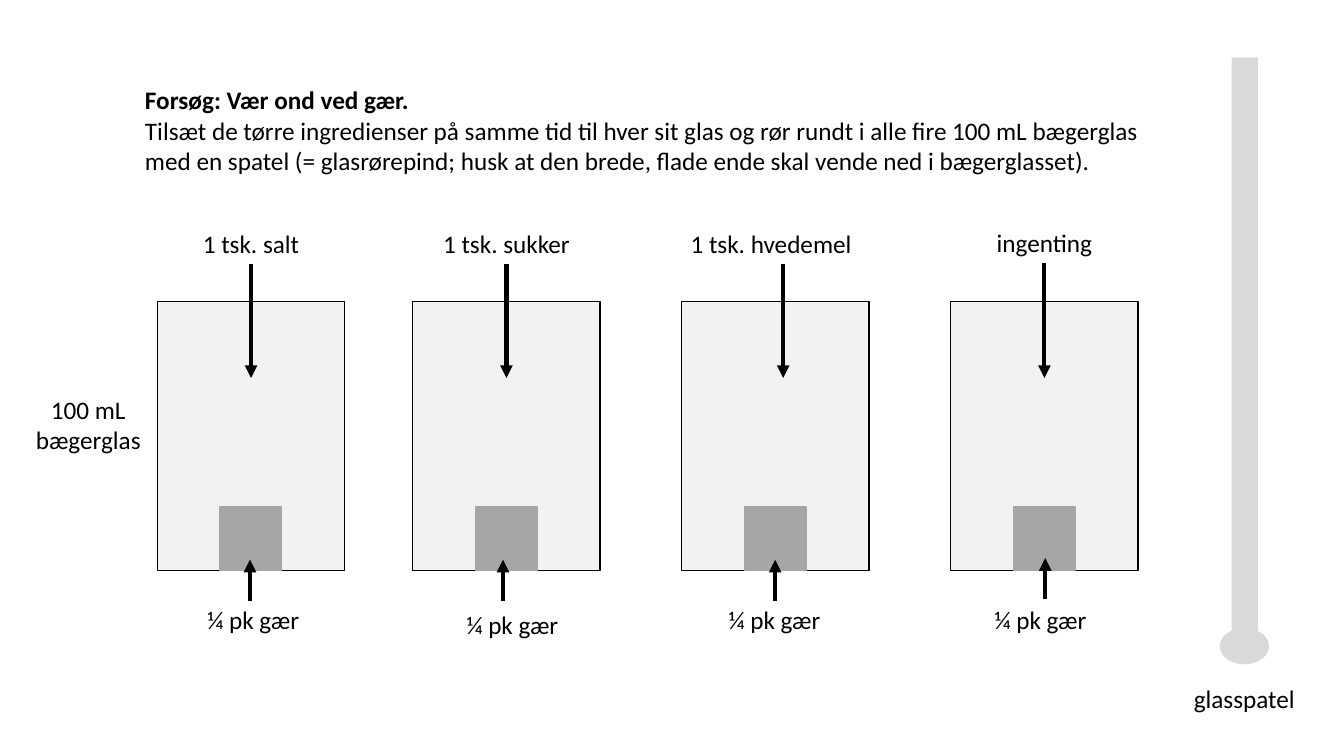
from dataclasses import dataclass

from lxml.etree import SubElement
from pptx import Presentation
from pptx.dml.color import RGBColor
from pptx.enum.shapes import MSO_CONNECTOR, MSO_SHAPE
from pptx.enum.text import MSO_AUTO_SIZE, PP_ALIGN
from pptx.oxml.ns import qn
from pptx.util import Pt

HEADING = "Forsøg: Vær ond ved gær."
INSTRUCTION = (
    "Tilsæt de tørre ingredienser på samme tid til hver sit glas og rør rundt i alle fire "
    "100 mL bægerglas med en spatel (= glasrørepind; husk at den brede, flade ende skal "
    "vende ned i bægerglasset)."
)
BEAKER_LABEL = "100 mL bægerglas"
YEAST_LABEL = "¼ pk gær"
SPATULA_LABEL = "glasspatel"


@dataclass
class Beaker:
    left: float
    ingredient: str
    ingredient_box: tuple
    pour_x: float
    yeast_label_at: tuple
    yeast_arrow_x: float
    yeast_arrow_y: float


BEAKERS = [
    Beaker(112.3, "1 tsk. salt", (112.3, 159.8, 134), 178.6, (141.1, 428.4), 178.6, 429.1),
    Beaker(294.5, "1 tsk. sukker", (303.1, 159.8, 117.4), 361.6, (326.2, 431.6), 359.3, 429.1),
    Beaker(486.7, "1 tsk. hvedemel", (483.8, 159.8, 134), 559.4, (513.4, 428), 553.7, 429.1),
    Beaker(679, "ingenting", (679, 159.1, 134), 745.4, (703.4, 428), 747.2, 428),
]


class Theme:
    font = "Calibri"
    size = Pt(18)
    ink = RGBColor(0, 0, 0)
    glass = RGBColor(0xF2, 0xF2, 0xF2)
    yeast = RGBColor(0xA6, 0xA6, 0xA6)
    spatula = RGBColor(0xD9, 0xD9, 0xD9)
    outline = Pt(1)
    arrow = Pt(3)


BEAKER_TOP, BEAKER_W, BEAKER_H = 215.3, 134, 192.2
YEAST_W, YEAST_H = 44, 45.3
LABEL_H = 29
YEAST_LABEL_W = 86.4
POUR_TOP, POUR_BOTTOM = 188.6, 270
YEAST_ARROW_LENGTH = 29.3
JOIN_TOLERANCE = 1.5
TOP, BOTTOM = 0, 2

deck = Presentation()
deck.slide_width, deck.slide_height = Pt(960), Pt(540)
shapes = deck.slides.add_slide(deck.slide_layouts[6]).shapes


def add_solid(kind, box, fill, line=None):
    solid = shapes.add_shape(kind, *map(Pt, box))
    solid.shadow.inherit = False
    solid.fill.solid()
    solid.fill.fore_color.rgb = fill
    if line is None:
        solid.line.fill.background()
    else:
        solid.line.color.rgb = line
        solid.line.width = Theme.outline


def add_text(box, *texts, align=PP_ALIGN.CENTER, bold_first=False):
    label = shapes.add_textbox(*map(Pt, box))
    frame = label.text_frame
    frame.word_wrap = True
    frame.auto_size = MSO_AUTO_SIZE.SHAPE_TO_FIT_TEXT
    frame.text = "\n".join(texts)
    for index, paragraph in enumerate(frame.paragraphs):
        paragraph.alignment = align
        paragraph.font.name = Theme.font
        paragraph.font.size = Theme.size
        paragraph.font.color.rgb = Theme.ink
        paragraph.font.bold = bold_first and index == 0
    return label


def add_arrow(x, start, end, label, side):
    arrow = shapes.add_connector(MSO_CONNECTOR.STRAIGHT, Pt(x), Pt(start), Pt(x), Pt(end))
    centre = label.left + label.width / 2
    if abs(centre - Pt(x)) < Pt(JOIN_TOLERANCE):
        arrow.begin_connect(label, side)
        arrow.end_x = arrow.begin_x
    arrow.line.color.rgb = Theme.ink
    arrow.line.width = Theme.arrow
    SubElement(arrow.line._get_or_add_ln(), qn("a:tailEnd"), type="triangle")
    SubElement(arrow._element.spPr, qn("a:effectLst"))


for beaker in BEAKERS:
    add_solid(MSO_SHAPE.RECTANGLE, (beaker.left, BEAKER_TOP, BEAKER_W, BEAKER_H),
              Theme.glass, Theme.ink)
    yeast_left = beaker.left + (BEAKER_W - YEAST_W) / 2
    yeast_top = BEAKER_TOP + BEAKER_H - YEAST_H
    add_solid(MSO_SHAPE.RECTANGLE, (yeast_left, yeast_top, YEAST_W, YEAST_H),
              Theme.yeast, Theme.yeast)
    ingredient = add_text((*beaker.ingredient_box, LABEL_H), beaker.ingredient)
    add_arrow(beaker.pour_x, POUR_TOP, POUR_BOTTOM, ingredient, BOTTOM)
    yeast = add_text((*beaker.yeast_label_at, YEAST_LABEL_W, LABEL_H), YEAST_LABEL,
                     align=PP_ALIGN.LEFT)
    add_arrow(beaker.yeast_arrow_x, beaker.yeast_arrow_y,
              beaker.yeast_arrow_y - YEAST_ARROW_LENGTH, yeast, TOP)

add_text((96.5, 56.9, 731.5, 72.7), HEADING, INSTRUCTION, align=PP_ALIGN.LEFT, bold_first=True)
add_solid(MSO_SHAPE.RECTANGLE, (879.8, 41, 18.7, 413.3), Theme.spatula)
add_solid(MSO_SHAPE.OVAL, (871.2, 448.6, 35.3, 25.9), Theme.spatula)
add_text((840.2, 484.6, 97.2, LABEL_H), SPATULA_LABEL)
add_text((16.6, 277.9, 92.9, 51), BEAKER_LABEL)

deck.save("out.pptx")
